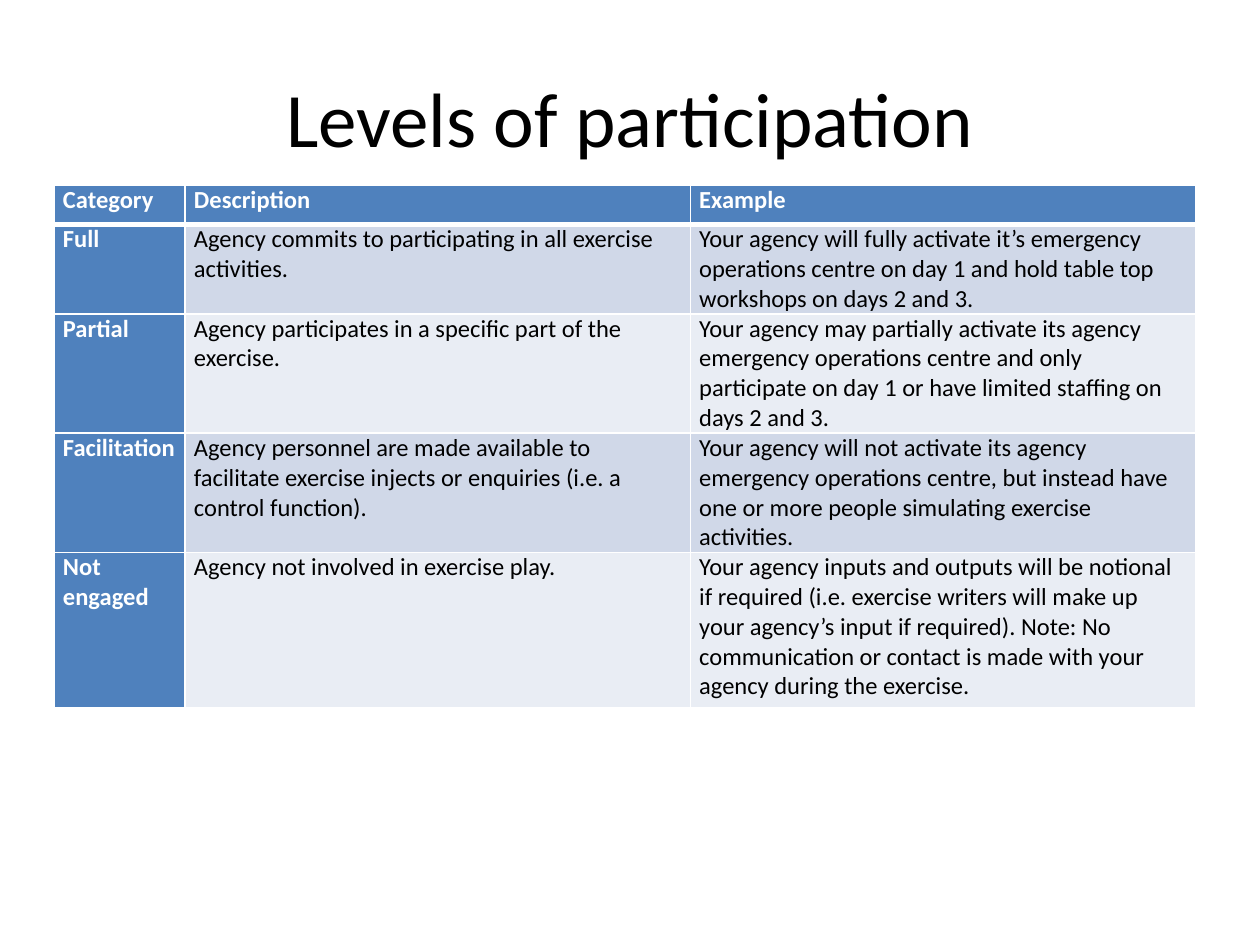
from dataclasses import dataclass

from lxml.etree import SubElement
from pptx import Presentation
from pptx.dml.color import RGBColor
from pptx.enum.text import MSO_ANCHOR, PP_ALIGN
from pptx.oxml.ns import qn
from pptx.slide import Slide
from pptx.table import _Cell as Cell
from pptx.util import Inches, Pt


@dataclass(frozen=True)
class Theme:
    font: str = "Calibri"
    title_size: int = 44
    table_size: int = 14
    text: str = "000000"
    heading_text: str = "FFFFFF"
    heading_fill: str = "4F81BD"
    band_fills: tuple[str, str] = ("D0D8E8", "E9EDF4")
    border: str = "FFFFFF"
    border_width: int = 1
    header_rule_width: int = 3


@dataclass(frozen=True)
class Level:
    category: str
    description: str
    example: str


THEME = Theme()
HEADER = Level("Category", "Description", "Example")
LEVELS = [
    Level(
        "Full",
        "Agency commits to participating in all exercise activities.",
        "Your agency will fully activate it’s emergency operations centre on day 1 "
        "and hold table top workshops on days 2 and 3.",
    ),
    Level(
        "Partial",
        "Agency participates in a specific part of the exercise.",
        "Your agency may partially activate its agency emergency operations centre "
        "and only participate on day 1 or have limited staffing on days 2 and 3.",
    ),
    Level(
        "Facilitation",
        "Agency personnel are made available to facilitate exercise injects or "
        "enquiries (i.e. a control function).",
        "Your agency will not activate its agency emergency operations centre, but "
        "instead have one or more people simulating exercise activities.",
    ),
    Level(
        "Not engaged",
        "Agency not involved in exercise play.",
        "Your agency inputs and outputs will be notional if required (i.e. exercise "
        "writers will make up your agency’s input if required). Note: No "
        "communication or contact is made with your agency during the exercise.",
    ),
]
COLUMN_WIDTHS = (1.04, 4.01, 4.01)
ROW_HEIGHTS = (0.31, 0.61, 0.61, 0.92, 1.23)


def add_title(slide: Slide, text: str) -> None:
    """Place and format the slide title."""
    title = slide.shapes.title
    title.left, title.top = Inches(0.5), Inches(0.3)
    title.width, title.height = Inches(9), Inches(1.25)
    title.text_frame.text = text
    title.text_frame.vertical_anchor = MSO_ANCHOR.MIDDLE
    paragraph = title.text_frame.paragraphs[0]
    paragraph.alignment = PP_ALIGN.CENTER
    font = paragraph.runs[0].font
    font.name, font.size = THEME.font, Pt(THEME.title_size)
    font.color.rgb = RGBColor.from_string(THEME.text)


def set_borders(cell: Cell, row: int) -> None:
    """Draw the cell borders, with a heavier rule below the header row."""
    properties = cell._tc.get_or_add_tcPr()
    for side in ("L", "R", "T", "B"):
        is_rule = (row, side) in ((0, "B"), (1, "T"))
        width = THEME.header_rule_width if is_rule else THEME.border_width
        line = SubElement(properties, qn(f"a:ln{side}"), w=str(Pt(width)))
        fill = SubElement(line, qn("a:solidFill"))
        SubElement(fill, qn("a:srgbClr"), val=THEME.border)


def format_cell(cell: Cell, text: str, row: int, column: int) -> None:
    """Fill one table cell with text and its heading or band style."""
    is_heading = row == 0 or column == 0
    cell.margin_left = cell.margin_right = Inches(0.07)
    cell.margin_top = cell.margin_bottom = 0
    set_borders(cell, row)
    cell.fill.solid()
    cell.fill.fore_color.rgb = RGBColor.from_string(
        THEME.heading_fill if is_heading else THEME.band_fills[(row - 1) % 2]
    )
    cell.text_frame.text = text
    paragraph = cell.text_frame.paragraphs[0]
    paragraph.space_before, paragraph.space_after = Pt(0), Pt(3)
    font = paragraph.runs[0].font
    font.name, font.size, font.bold = THEME.font, Pt(THEME.table_size), is_heading
    font.color.rgb = RGBColor.from_string(
        THEME.heading_text if is_heading else THEME.text
    )


def add_levels_table(slide: Slide, levels: list[Level]) -> None:
    """Add the table of participation levels."""
    table = slide.shapes.add_table(
        len(ROW_HEIGHTS), len(COLUMN_WIDTHS), Inches(0.43), Inches(1.47),
        Inches(sum(COLUMN_WIDTHS)), Inches(sum(ROW_HEIGHTS)),
    ).table
    for column, width in zip(table.columns, COLUMN_WIDTHS):
        column.width = Inches(width)
    for row, height in zip(table.rows, ROW_HEIGHTS):
        row.height = Inches(height)
    for row, level in enumerate([HEADER, *levels]):
        texts = (level.category, level.description, level.example)
        for column, text in enumerate(texts):
            format_cell(table.cell(row, column), text, row, column)


def main() -> None:
    """Build and save the presentation."""
    presentation = Presentation()
    presentation.slide_width, presentation.slide_height = Inches(10), Inches(7.5)
    slide = presentation.slides.add_slide(presentation.slide_layouts[5])
    add_title(slide, "Levels of participation")
    add_levels_table(slide, LEVELS)
    presentation.save("out.pptx")


if __name__ == "__main__":
    main()
